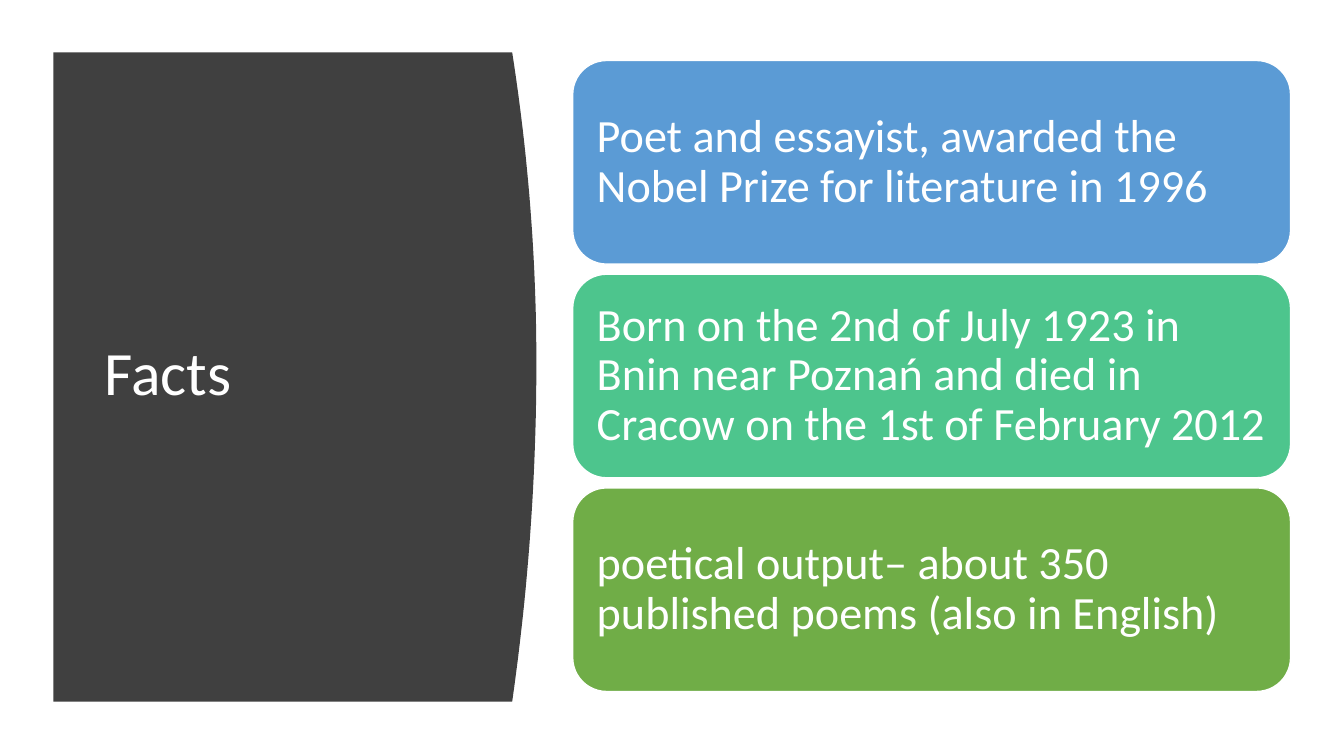
from pptx import Presentation
from pptx.dml.color import RGBColor
from pptx.enum.shapes import MSO_SHAPE
from pptx.enum.text import MSO_ANCHOR, PP_ALIGN
from pptx.util import Inches, Pt

ROUNDED = MSO_SHAPE.ROUNDED_RECTANGLE
MIDDLE = MSO_ANCHOR.MIDDLE
LEFT = PP_ALIGN.LEFT

WHITE = RGBColor(0xFF, 0xFF, 0xFF)
CHARCOAL = RGBColor(0x40, 0x40, 0x40)
BLUE = RGBColor(0x5B, 0x9B, 0xD5)
TEAL = RGBColor(0x4D, 0xC5, 0x8D)
GREEN = RGBColor(0x70, 0xAD, 0x47)

FACTS = [
    (BLUE, "Poet and essayist, awarded the Nobel Prize for literature in 1996"),
    (TEAL, "Born on the 2nd of July 1923 in Bnin near Poznań "
           "and died in Cracow on the 1st of February 2012"),
    (GREEN, "poetical output– about 350 published poems (also in English)"),
]
CARD_TOP, CARD_HEIGHT, CARD_GAP = 0.6, 2.02, 0.1


class FactSlide:
    font = "Calibri"
    color = WHITE

    def __init__(self, prs):
        self.s = prs.slides.add_slide(prs.slide_layouts[6])

    def set_text(self, sp, text, size, inset):
        tf = sp.text_frame
        tf.word_wrap = True
        tf.vertical_anchor = MIDDLE
        tf.margin_left = tf.margin_right = Inches(inset)
        tf.margin_top = tf.margin_bottom = Inches(inset)
        p = tf.paragraphs[0]
        p.text = text
        p.alignment = LEFT
        p.line_spacing = 0.9
        p.font.name = self.font
        p.font.size = Pt(size)
        p.font.color.rgb = self.color

    def curved_panel(self, left, top, right, bottom, bulge, peak, fill, steps=24):
        edge = []
        for i in range(-steps, steps + 1):
            t = i / steps
            reach = peak - top if t < 0 else bottom - peak
            edge.append((Inches(right - bulge * t * t), Inches(peak + t * reach)))
        builder = self.s.shapes.build_freeform(Inches(left), Inches(top))
        builder.add_line_segments(edge + [(Inches(left), Inches(bottom))], close=True)
        sp = builder.convert_to_shape()
        sp.shadow.inherit = False
        sp.fill.solid()
        sp.fill.fore_color.rgb = fill
        sp.line.fill.background()

    def title(self, left, top, width, height, text):
        sp = self.s.shapes.add_textbox(
            Inches(left), Inches(top), Inches(width), Inches(height))
        self.set_text(sp, text, 44, 0.1)

    def card(self, left, top, width, height, fill, text):
        sp = self.s.shapes.add_shape(
            ROUNDED, Inches(left), Inches(top), Inches(width), Inches(height))
        sp.shadow.inherit = False
        sp.fill.solid()
        sp.fill.fore_color.rgb = fill
        sp.line.color.rgb = WHITE
        sp.line.width = Pt(1)
        self.set_text(sp, text, 33, 0.14)


def main():
    prs = Presentation()
    prs.slide_width = Inches(13.33)
    prs.slide_height = Inches(7.5)
    slide = FactSlide(prs)
    slide.curved_panel(0.53, 0.52, 5.32, 6.96, bulge=0.24, peak=3.6, fill=CHARCOAL)
    slide.title(0.94, 1.11, 3.74, 5.24, "Facts")
    for i, (fill, text) in enumerate(FACTS):
        top = CARD_TOP + i * (CARD_HEIGHT + CARD_GAP)
        slide.card(5.68, top, 7.12, CARD_HEIGHT, fill, text)
    prs.save("out.pptx")


if __name__ == "__main__":
    main()
